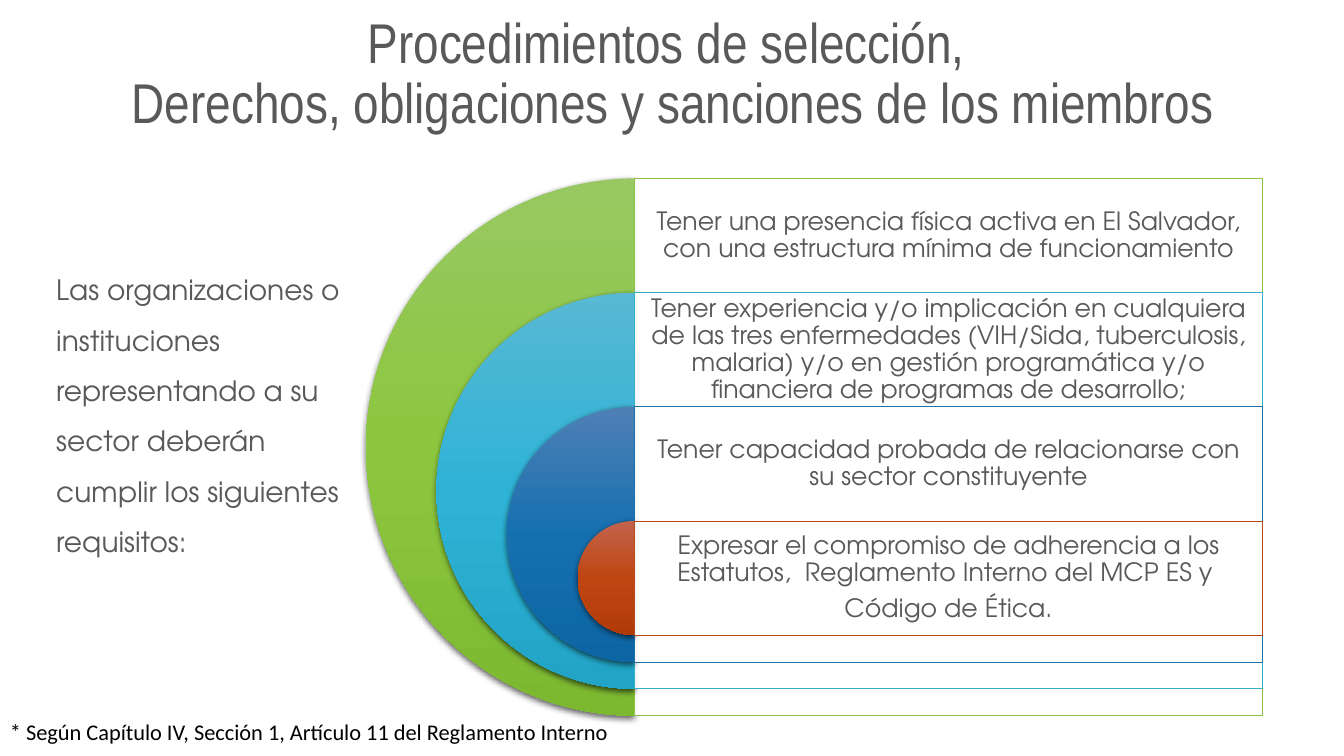
from lxml.etree import SubElement
from pptx import Presentation
from pptx.dml.color import RGBColor
from pptx.enum.shapes import MSO_SHAPE
from pptx.enum.text import MSO_ANCHOR, PP_ALIGN
from pptx.oxml.ns import qn
from pptx.util import Inches, Pt

COLORS = {"text": "595959", "note": "000000", "panel": "FFFFFF", "shadow": "000000"}
BODY_FONT = "TeX Gyre Adventor"
REQUIREMENTS = [
    (["Tener una presencia física activa en El Salvador, con una estructura mínima de funcionamiento"],
     ["98C862", "8CC73F", "7DB831"], "8BC145"),
    (["Tener experiencia y/o implicación en cualquiera de las tres enfermedades (VIH/Sida, tuberculosis, "
      "malaria) y/o en gestión programática y/o financiera de programas de desarrollo;"],
     ["59B8D4", "2EB3D6", "21A4C6"], "36AFCE"),
    (["Tener capacidad probada de relacionarse con su sector constituyente"],
     ["4E80B5", "1670B0", "0D65A3"], "1D6FA9"),
    (["Expresar el compromiso de adherencia a los Estatutos,  Reglamento Interno del MCP ES y ",
      "Código de Ética."],
     ["C2634D", "BF4611", "B13B08"], "B74919"),
]


def add_color(parent, color, alpha=None):
    """Append a solid colour, optionally with a percentage of opacity."""
    node = SubElement(parent, qn("a:srgbClr"), val=color)
    if alpha is not None:
        SubElement(node, qn("a:alpha"), val=str(alpha * 1000))


def add_text(page, box, paragraphs, size, font=BODY_FONT, color="text", align=PP_ALIGN.LEFT,
             anchor=MSO_ANCHOR.TOP, spacing=1.0, after=0, inset=None, wrap=True):
    """Place a text box with one run per paragraph."""
    frame = page.shapes.add_textbox(*map(Inches, box)).text_frame
    frame.word_wrap = wrap
    frame.vertical_anchor = anchor
    if inset is not None:
        frame.margin_left = frame.margin_right = Inches(inset)
        frame.margin_top = frame.margin_bottom = Inches(inset)
    for index, words in enumerate(paragraphs):
        para = frame.paragraphs[0] if index == 0 else frame.add_paragraph()
        para.alignment = align
        para.line_spacing = spacing
        para.space_after = Pt(after)
        span = para.add_run()
        span.text = words
        span.font.size = Pt(size)
        span.font.name = font
        span.font.color.rgb = RGBColor.from_string(COLORS[color])


def add_half_disc(page, box, stops):
    """Draw the left half of a disc with a vertical gradient and a soft shadow."""
    disc = page.shapes.add_shape(MSO_SHAPE.PIE, *map(Inches, box))
    disc.adjustments[0], disc.adjustments[1] = 54, 162
    disc.line.fill.background()
    disc.fill.gradient()
    disc.fill.gradient_angle = 270
    properties = disc.element.spPr
    stop_list = properties.find(qn("a:gradFill")).find(qn("a:gsLst"))
    for old_stop in list(stop_list):
        stop_list.remove(old_stop)
    for index, color in enumerate(stops):
        add_color(SubElement(stop_list, qn("a:gs"), pos=str(index * 50000)), color)
    effects = SubElement(properties, qn("a:effectLst"))
    shadow = SubElement(effects, qn("a:outerShdw"), blurRad=str(Pt(4.5)), dist=str(Pt(1.5)),
                        dir="5400000", rotWithShape="0")
    add_color(shadow, COLORS["shadow"], 63)


def add_panel(page, box, outline):
    """Draw a nearly opaque white panel with a thin outline."""
    panel = page.shapes.add_shape(MSO_SHAPE.RECTANGLE, *map(Inches, box))
    panel.shadow.inherit = False
    panel.fill.solid()
    panel.fill.fore_color.rgb = RGBColor.from_string(COLORS["panel"])
    color = panel.element.spPr.find(qn("a:solidFill"))[0]
    SubElement(color, qn("a:alpha"), val="90000")
    panel.line.color.rgb = RGBColor.from_string(outline)
    panel.line.width = Pt(0.5)


def add_target_list(page, box):
    """Nest the half discs and their panels, one row for each requirement."""
    left, top, width, height = box
    center = left + height / 2
    panel_width = width - height / 2
    row = height * 0.2125
    rise = height * 0.05
    for index, (paragraphs, stops, outline) in enumerate(REQUIREMENTS):
        diameter = height - index * (row + rise)
        row_top = top + index * row
        add_half_disc(page, (center - diameter / 2, row_top, diameter, diameter), stops)
        add_panel(page, (center, row_top, panel_width, diameter), outline)
        add_text(page, (center, row_top, panel_width, row), paragraphs, 18, align=PP_ALIGN.CENTER,
                 anchor=MSO_ANCHOR.MIDDLE, spacing=0.9, after=6.3, inset=0.07)


def add_title(page, box):
    """Place the two-line title."""
    lines = ["Procedimientos de selección, ", "Derechos, obligaciones y sanciones de los miembros"]
    add_text(page, box, lines, 40, font="Arial Narrow", align=PP_ALIGN.CENTER,
             anchor=MSO_ANCHOR.MIDDLE, spacing=0.9)


def add_introduction(page, box):
    """Place the sentence that introduces the requirements."""
    add_text(page, box, ["Las organizaciones o instituciones representando a su sector deberán "
                         "cumplir los siguientes requisitos:"], 20, spacing=1.5)


def add_footnote(page, box):
    """Place the reference to the internal rules."""
    add_text(page, box, ["* Según Capítulo IV, Sección 1, Artículo 11 del Reglamento Interno"], 16,
             font="Calibri", color="note", wrap=False)


def main():
    """Build the slide and save it."""
    deck = Presentation()
    deck.slide_width, deck.slide_height = Inches(13.33), Inches(7.5)
    page = deck.slides.add_slide(deck.slide_layouts[6])
    add_title(page, (0.92, 0.02, 11.5, 1.45))
    add_introduction(page, (0.46, 2.49, 3.07, 3.57))
    add_target_list(page, (3.63, 1.77, 8.89, 5.33))
    add_footnote(page, (0, 7.08, 6.21, 0.37))
    deck.save("out.pptx")


if __name__ == "__main__":
    main()
